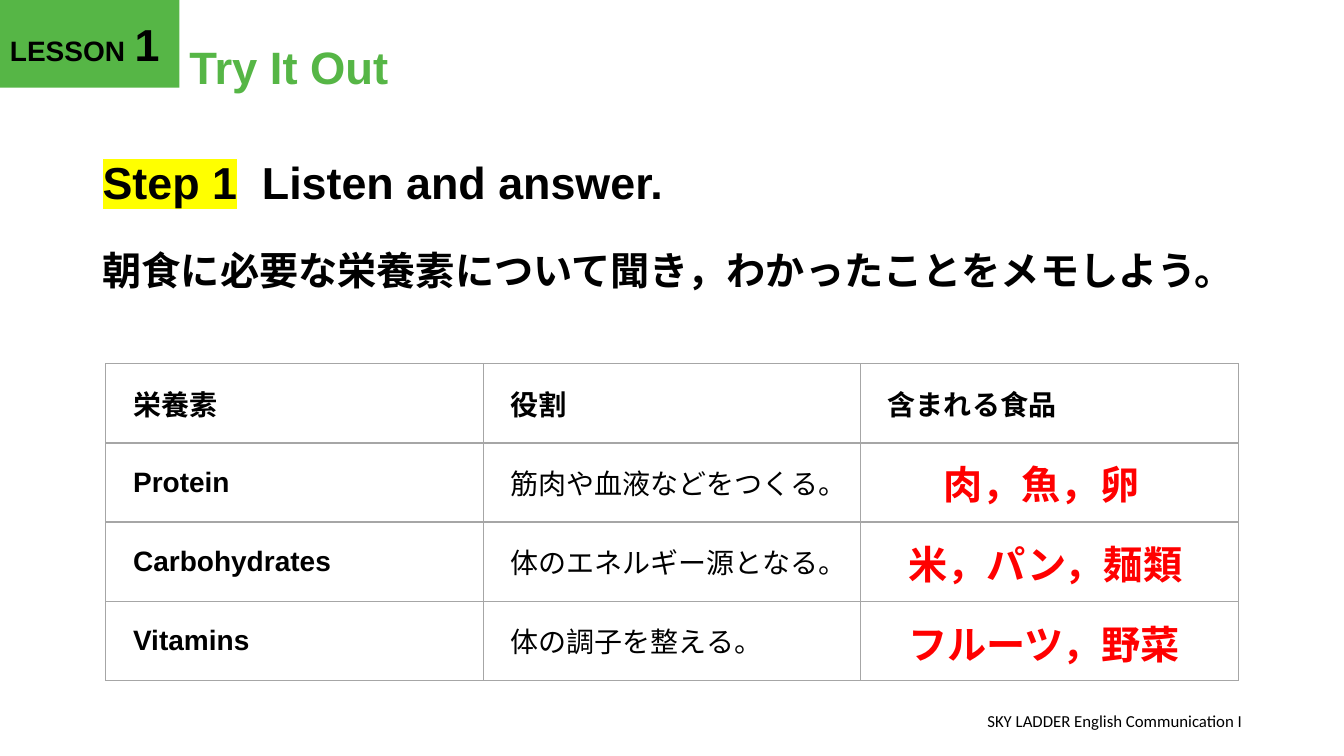
from lxml import etree
from pptx import Presentation
from pptx import util as u
from pptx.dml.color import RGBColor
from pptx.enum import shapes, text
from pptx.oxml import ns

COLORS = {"green": "56B646", "black": "000000", "red": "FF0000",
          "yellow": "FFFF00", "grey": "A6A6A6"}
LATIN, KANJI, PLAIN = "Arial", "Noto Sans CJK JP", "Calibri"
ALIGN = text.PP_ALIGN
MIDDLE = text.MSO_ANCHOR.MIDDLE


def color(name):
    return RGBColor.from_string(COLORS[name])


def child(parent, tag, **attrs):
    return etree.SubElement(parent, ns.qn(tag), **attrs)


def apply(target, values):
    for name, value in values.items():
        setattr(target, name, value)


class Page:
    def __init__(self, deck):
        self.slide = deck.slides.add_slide(deck.slide_layouts[6])
        self.forms = self.slide.shapes

    def run(self, para, words, size, face=LATIN, ink="black", bold=True, mark=None):
        """Add a run; mark names a highlight colour."""
        run = para.add_run()
        run.text = words
        apply(run.font, {"size": u.Pt(size), "name": face, "bold": bold})
        run.font.color.rgb = color(ink)
        props = run.font._element
        east = etree.Element(ns.qn("a:ea"), typeface=KANJI)
        latin = props.find(ns.qn("a:latin"))
        latin.addnext(east)
        if mark:
            light = etree.Element(ns.qn("a:highlight"))
            child(light, "a:srgbClr", val=COLORS[mark])
            latin.addprevious(light)

    def box(self, at, **style):
        """Add a wrapping text box and return its text frame."""
        frame = self.forms.add_textbox(*map(u.Inches, at)).text_frame
        apply(frame, {"word_wrap": True, **style})
        return frame

    def line(self, at, words, size, align=ALIGN.LEFT, space=1.0, anchor=None, **font):
        """Add a text box of one paragraph."""
        para = self.box(at, vertical_anchor=anchor).paragraphs[0]
        apply(para, {"alignment": align, "line_spacing": space})
        self.run(para, words, size, **font)

    def banner(self, at, runs):
        shape = self.forms.add_shape(shapes.MSO_SHAPE.RECTANGLE, *map(u.Inches, at))
        shape.shadow.inherit = False
        shape.fill.solid()
        shape.fill.fore_color.rgb = color("green")
        shape.line.fill.background()
        shape.text_frame.vertical_anchor = MIDDLE
        para = shape.text_frame.paragraphs[0]
        para.alignment = ALIGN.JUSTIFY
        for words, size in runs:
            self.run(para, words, size)

    def task(self, at, step, order, detail):
        frame = self.box(at)
        first, second = frame.paragraphs[0], frame.add_paragraph()
        for para in (first, second):
            apply(para, {"line_spacing": 1.5, "space_before": u.Pt(10)})
        tabs = child(first._p.get_or_add_pPr(), "a:tabLst")
        child(tabs, "a:tab", pos=str(u.Inches(1.58)), algn="l")
        self.run(first, step, 32, mark="yellow")
        self.run(first, "\t" + order, 32)
        self.run(second, detail, 28)

    def cell(self, cell, words, **font):
        side = u.Inches(0.07)
        apply(cell, {"margin_left": side, "margin_right": side, "margin_top": 0,
                     "margin_bottom": 0, "vertical_anchor": MIDDLE})
        props = cell._tc.get_or_add_tcPr()
        for edge in ("a:lnL", "a:lnR", "a:lnT", "a:lnB"):
            fill = child(child(props, edge, w=str(u.Pt(1))), "a:solidFill")
            child(fill, "a:srgbClr", val=COLORS["grey"])
        cell.fill.background()
        if words:
            para = cell.text_frame.paragraphs[0]
            para.alignment = ALIGN.JUSTIFY
            para._p.get_or_add_pPr().set("marL", str(u.Inches(0.2)))
            self.run(para, words, 20, **font)

    def table(self, at, rows):
        grid = self.forms.add_table(len(rows), len(rows[0]), *map(u.Inches, at)).table
        apply(grid, {"first_row": False, "horz_banding": False})
        for r, row in enumerate(rows):
            for c, words in enumerate(row):
                face = LATIN if r and c == 0 else KANJI
                self.cell(grid.cell(r, c), words, face=face, bold=r == 0 or c == 0)


def main():
    deck = Presentation()
    apply(deck, {"slide_width": u.Inches(13.33), "slide_height": u.Inches(7.5)})
    page = Page(deck)
    page.banner((0, 0, 1.78, 0.87), [("LESSON", 20), (" ", 24), ("1", 32)])
    page.table((1.05, 3.61, 11.23, 3.14), [
        ("栄養素", "役割", "含まれる食品"),
        ("Protein", "筋肉や血液などをつくる。", ""),
        ("Carbohydrates", "体のエネルギー源となる。", ""),
        ("Vitamins", "体の調子を整える。", ""),
    ])
    page.line((1.78, 0.4, 10.64, 0.63), "Try It Out", 32.4, space=0.9, ink="green")
    page.task((0.92, 1.22, 11.5, 2.2), "Step 1", "Listen and answer.",
              "朝食に必要な栄養素について聞き，わかったことをメモしよう。")
    page.line((7.92, 6.95, 4.5, 0.4), "SKY LADDER English Communication I", 12,
              align=ALIGN.RIGHT, anchor=MIDDLE, face=PLAIN, bold=False)
    answers = [(9.26, 2.24, "肉，魚，卵"), (8.91, 2.93, "米，パン，麺類"),
               (8.91, 2.93, "フルーツ，野菜")]
    for i, (left, width, words) in enumerate(answers):
        page.line((left, 4.52 + 0.79 * i, width, 0.57), words, 28, face=KANJI, ink="red")
    deck.save("out.pptx")


if __name__ == "__main__":
    main()
